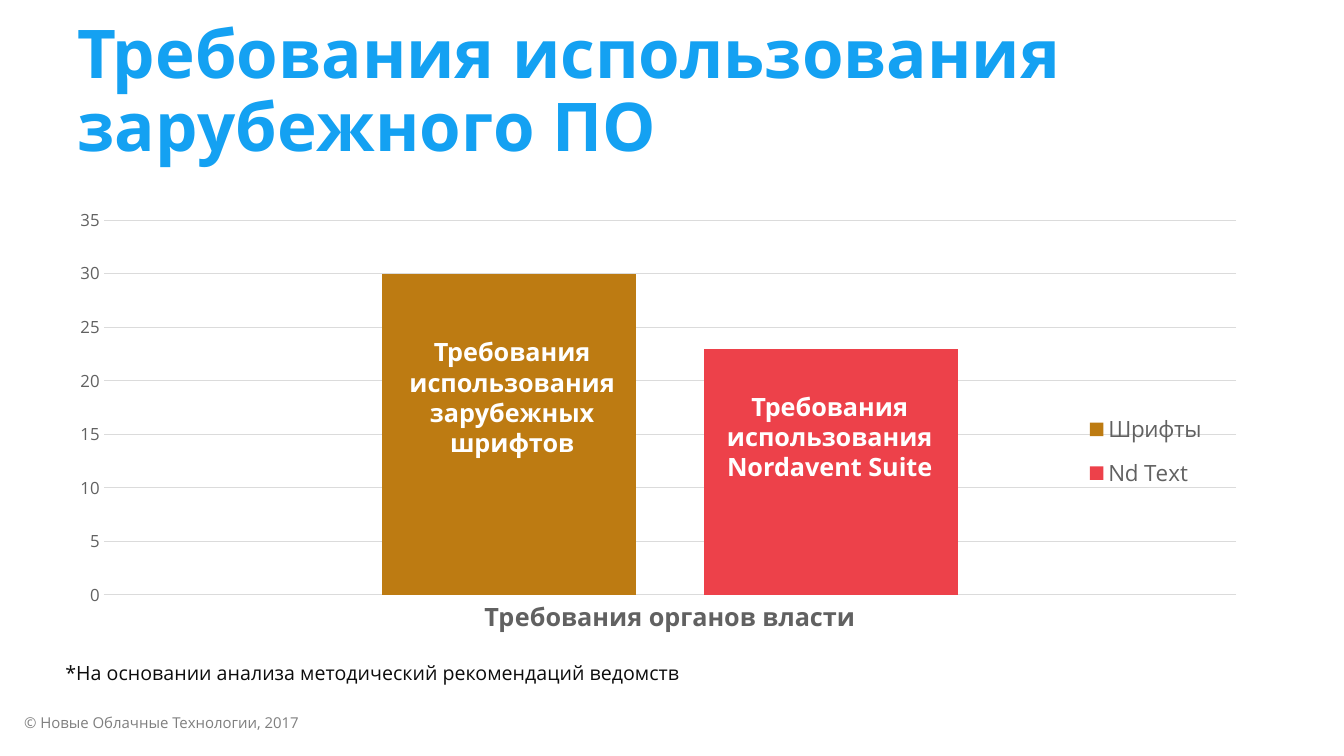
from dataclasses import dataclass

from lxml.etree import SubElement as sub
from pptx import Presentation
from pptx.chart.data import CategoryChartData as ChartData
from pptx.dml.color import RGBColor as Rgb
from pptx.enum.chart import XL_CHART_TYPE as Kind
from pptx.enum.chart import XL_LEGEND_POSITION as Side
from pptx.enum.chart import XL_TICK_MARK as Tick
from pptx.enum.text import MSO_ANCHOR as Anchor
from pptx.enum.text import PP_ALIGN as Align
from pptx.oxml.ns import qn
from pptx.util import Pt

SCALE = 9144  # EMU in one px, 100 px to the inch


@dataclass(frozen=True)
class Theme:
    font: str = "Open Sans"
    blue: str = "14A1F2"
    ink: str = "0C0C0C"
    gray: str = "616161"
    pale: str = "7F7F7F"
    grid: str = "DBDBDB"
    white: str = "FFFFFF"
    amber: str = "BD7B12"
    red: str = "ED414A"
    title: float = 48
    label: float = 18
    key: float = 16
    note: float = 14
    tick: float = 12
    base: float = 10
    foot: float = 10.7


THEME = Theme()


def px(*nums):
    return [num * SCALE for num in nums]


def style(font, size, color, bold=False):
    font.name = THEME.font
    font.size = Pt(size)
    font.bold = bold
    font.color.rgb = Rgb.from_string(color)


def add_text(slide, text, box, size, color, bold=False,
             align=Align.LEFT, anchor=Anchor.TOP, lead=None):
    frame = slide.shapes.add_textbox(*px(*box)).text_frame
    frame.word_wrap = True
    frame.vertical_anchor = anchor
    para = frame.paragraphs[0]
    para.alignment = align
    para.line_spacing = lead
    run = para.add_run()
    run.text = text
    style(run.font, size, color, bold)


def place(part, index, modes, **spots):
    """Give a chart part a manual layout in fractions of the chart."""
    for old in part.findall(qn("c:layout")):
        part.remove(old)
    layout = part.makeelement(qn("c:layout"))
    part.insert(index, layout)
    manual = sub(layout, qn("c:manualLayout"))
    for name, val in {**modes, **spots}.items():
        sub(manual, qn(f"c:{name}"), val=str(val))


def set_line(line):
    line.color.rgb = Rgb.from_string(THEME.grid)
    line.width = Pt(0.75)


def set_axes(chart):
    cat, val = chart.category_axis, chart.value_axis
    for axis in (cat, val):
        axis.major_tick_mark = axis.minor_tick_mark = Tick.NONE
    style(cat.tick_labels.font, THEME.label, THEME.gray, bold=True)
    style(val.tick_labels.font, THEME.tick, THEME.gray)
    set_line(cat.format.line)
    set_line(val.major_gridlines.format.line)
    val.format.line.fill.background()
    val.minimum_scale, val.maximum_scale, val.major_unit = 0, 35, 5


def set_legend(chart):
    chart.has_legend = True
    legend = chart.legend
    legend.position = Side.BOTTOM
    legend.include_in_layout = False
    style(legend.font, THEME.key, THEME.gray)
    place(legend._element, 1, {"xMode": "edge", "yMode": "edge"},
          x=0.85, y=0.41, w=0.11, h=0.21)


def add_bars(slide, box, cats, series):
    data = ChartData()
    data.categories = cats
    for name, vals, _ in series:
        data.add_series(name, vals)
    chart = slide.shapes.add_chart(
        Kind.COLUMN_CLUSTERED, *px(*box), data).chart
    chart.has_title = False
    style(chart.font, THEME.base, THEME.ink)
    plot = chart.plots[0]
    plot.gap_width, plot.overlap = 219, -27
    plot.vary_by_categories = False
    for bar, (_, _, color) in zip(plot.series, series):
        bar.format.fill.solid()
        bar.format.fill.fore_color.rgb = Rgb.from_string(color)
    set_axes(chart)
    set_legend(chart)
    area = chart._chartSpace.chart.plotArea
    modes = {"layoutTarget": "inner", "xMode": "edge", "yMode": "edge"}
    place(area, 0, modes, x=0.04, y=0.04, w=0.94, h=0.77)


def main():
    deck = Presentation()
    deck.slide_width, deck.slide_height = px(1333, 750)
    slide = deck.slides.add_slide(deck.slide_layouts[6])

    add_text(slide, "© Новые Облачные Технологии, 2017",
             (14, 703, 341, 28), THEME.foot, THEME.pale)
    add_text(slide, "Требования использования зарубежного ПО",
             (67, 30, 1200, 125), THEME.title, THEME.blue, bold=True,
             anchor=Anchor.MIDDLE, lead=0.9)
    add_bars(slide, (55, 199, 1195, 483), ["Требования органов власти"],
             [("Шрифты", [30], THEME.amber), ("Nd Text", [23], THEME.red)])
    labels = [
        ("Требования использования зарубежных шрифтов",
         (385, 329, 246, 131)),
        ("Требования использования Nordavent Suite",
         (703, 383, 240, 101)),
    ]
    for text, box in labels:
        add_text(slide, text, box, THEME.label, THEME.white, bold=True,
                 align=Align.CENTER)
    add_text(slide, "*На основании анализа методический рекомендаций ведомств",
             (55, 651, 1175, 34), THEME.note, THEME.ink)
    deck.save("out.pptx")


if __name__ == "__main__":
    main()
